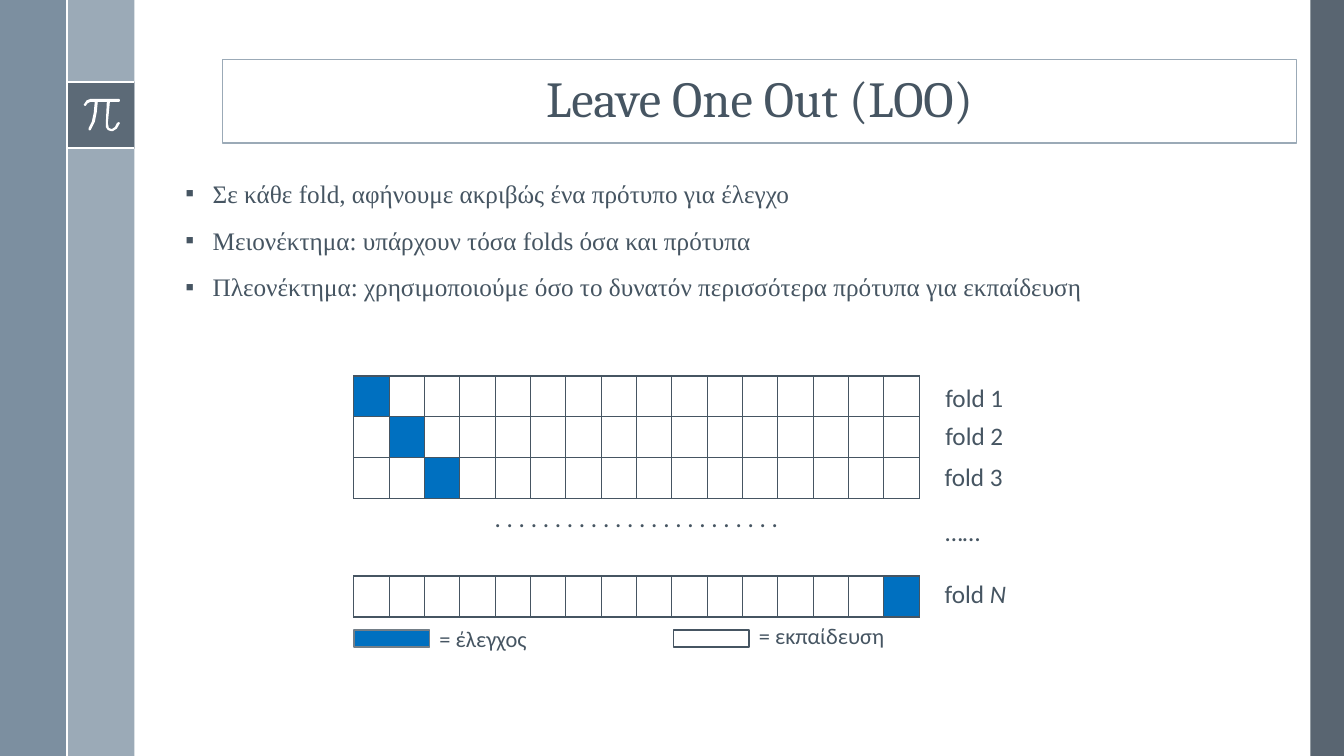
from dataclasses import dataclass

from lxml import etree
from pptx import Presentation
from pptx.dml.color import RGBColor
from pptx.enum.shapes import MSO_CONNECTOR, MSO_SHAPE
from pptx.enum.text import MSO_ANCHOR, MSO_AUTO_SIZE, PP_ALIGN
from pptx.oxml.ns import qn
from pptx.util import Inches, Pt

RECTANGLE = MSO_SHAPE.RECTANGLE
STRAIGHT = MSO_CONNECTOR.STRAIGHT
CENTER, LEFT = PP_ALIGN.CENTER, PP_ALIGN.LEFT
TOP, MIDDLE = MSO_ANCHOR.TOP, MSO_ANCHOR.MIDDLE
NO_AUTOFIT = MSO_AUTO_SIZE.NONE

WIDTH, HEIGHT = Inches(13.33), Inches(7.5)


@dataclass(frozen=True)
class Theme:
    ink: str = "465562"
    slate: str = "475562"
    steel: str = "6A8093"
    mist: str = "9BAAB7"
    swatch_edge: str = "737E87"
    test: str = "0070C0"
    white: str = "FFFFFF"
    title_font: str = "Cambria"
    body_font: str = "Times New Roman"
    label_font: str = "Calibri"
    title_size: int = 36
    text_size: int = 18
    legend_size: int = 16


THEME = Theme()

BULLETS = (
    "Σε κάθε fold, αφήνουμε ακριβώς ένα πρότυπο για έλεγχο",
    "Μειονέκτημα: υπάρχουν τόσα folds όσα και πρότυπα",
    "Πλεονέκτημα: χρησιμοποιούμε όσο το δυνατόν περισσότερα πρότυπα για εκπαίδευση",
)

# Fold table: column of the test sample in each row, None for the dotted row
SAMPLES = 16
TEST_COLUMNS = (0, 1, 2, None, SAMPLES - 1)
TABLE_LEFT, TABLE_TOP, TABLE_WIDTH = 26.33, 49.73, 42.1
FOLD_HEIGHT, DOTS_HEIGHT = 5.41, 10.25

# Label text, its italic ending, left and top as shares of the slide
FOLD_LABELS = (
    ("fold 1", "", 69.6, 49.87),
    ("fold 2", "", 69.6, 54.93),
    ("fold 3", "", 69.55, 60.4),
    ("……", "", 69.6, 67.6),
    ("fold ", "N", 69.55, 75.87),
)

# Outline of the pi sign, in hundredths of an inch from its corner
PI_OUTLINE = (
    (35, 0), (7, 0), (3, 1.5), (0, 6), (1, 7), (2, 7), (4, 4.3), (7, 3),
    (11, 3), (10, 14), (8, 23), (5, 29), (5, 31), (6, 31.3), (7, 31),
    (11, 23), (13, 13), (14, 3), (23, 3), (22, 24), (22, 28), (24, 31),
    (27, 32), (29, 32), (33, 29.5), (36, 24), (35, 23), (33, 24), (31, 28),
    (28, 30), (25, 29), (24, 24), (26, 3), (35, 3), (36, 2), (36, 1),
)


def across(percent):
    return round(WIDTH * percent / 100)


def down(percent):
    return round(HEIGHT * percent / 100)


def box(left, top, width, height):
    return across(left), down(top), across(width), down(height)


def color(value):
    return RGBColor.from_string(value)


def paint(shape, fill, line=None, opacity=100):
    shape.fill.solid()
    shape.fill.fore_color.rgb = color(fill)
    if opacity < 100:
        tint = shape.fill._xPr.find(qn("a:solidFill"))[0]
        etree.SubElement(tint, qn("a:alpha"), val=str(opacity * 1000))
    if line:
        shape.line.color.rgb = color(line)
        shape.line.width = Pt(1)
    else:
        shape.line.fill.background()


def add_box(slide, area, fill, line=None, opacity=100):
    shape = slide.shapes.add_shape(RECTANGLE, *box(*area))
    shape.shadow.inherit = False
    paint(shape, fill, line, opacity)


def add_rule(slide, start, end):
    rule = slide.shapes.add_connector(
        STRAIGHT, across(start[0]), down(start[1]), across(end[0]), down(end[1]))
    rule.line.color.rgb = color(THEME.white)
    rule.line.width = Pt(1.5)
    etree.SubElement(rule._element.spPr, qn("a:effectLst"))


def style(paragraph, font, size, align=LEFT):
    paragraph.alignment = align
    paragraph.font.name = font
    paragraph.font.size = Pt(size)
    paragraph.font.color.rgb = color(THEME.ink)


def set_frame(shape, area, anchor):
    shape.left, shape.top, shape.width, shape.height = box(*area)
    frame = shape.text_frame
    frame.word_wrap = True
    frame.auto_size = NO_AUTOFIT
    frame.vertical_anchor = anchor
    return frame


def add_label(slide, area, text, size, italic_end=""):
    shape = slide.shapes.add_textbox(*box(*area))
    paragraph = set_frame(shape, area, TOP).paragraphs[0]
    paragraph.add_run().text = text
    if italic_end:
        run = paragraph.add_run()
        run.text = italic_end
        run.font.italic = True
    style(paragraph, THEME.label_font, size)


def add_pi(slide):
    left, top = across(6.23), down(13.07)
    points = [(left + Inches(x / 100), top + Inches(y / 100)) for x, y in PI_OUTLINE]
    builder = slide.shapes.build_freeform(*points[0])
    builder.add_line_segments(points[1:], close=True)
    sign = builder.convert_to_shape()
    sign.shadow.inherit = False
    paint(sign, THEME.white)


def add_side_bars(slide):
    add_box(slide, (97.5, 0, 2.5, 100), THEME.slate, opacity=90)
    add_box(slide, (5, 0, 5, 100), THEME.mist)
    add_box(slide, (0, 0, 5, 100), THEME.steel, opacity=88)
    add_box(slide, (5, 10.8, 5, 8.87), THEME.slate, opacity=75)
    for level in (10.8, 19.6):
        add_rule(slide, (5, level), (10, level))
    add_pi(slide)
    add_rule(slide, (5, 0), (5, 100))


def fill_title(slide):
    title = slide.shapes.title
    paint(title, THEME.white, THEME.mist)
    paragraph = set_frame(title, (16.57, 7.87, 79.88, 11.07), MIDDLE).paragraphs[0]
    paragraph.text = "Leave One Out (LOO)"
    paragraph.line_spacing = 0.9
    style(paragraph, THEME.title_font, THEME.title_size, CENTER)


def fill_bullets(slide):
    frame = set_frame(slide.placeholders[1], (13.05, 23.33, 80.25, 66.67), TOP)
    frame.text = "\n".join(BULLETS)
    for paragraph in frame.paragraphs:
        paragraph.line_spacing = 0.9
        paragraph.space_before = Pt(14)
        properties = paragraph._p.get_or_add_pPr()
        properties.set("marL", str(Inches(0.27)))
        properties.set("indent", str(-Inches(0.27)))
        etree.SubElement(properties, qn("a:buFont"), typeface=THEME.body_font)
        etree.SubElement(properties, qn("a:buChar"), char="▪")
        style(paragraph, THEME.body_font, THEME.text_size)


def set_borders(cell, drawn):
    properties = cell._tc.get_or_add_tcPr()
    for position, side in enumerate("LRTB"):
        border = etree.Element(qn(f"a:ln{side}"), w=str(Pt(1)))
        if side in drawn:
            fill = etree.SubElement(border, qn("a:solidFill"))
            etree.SubElement(fill, qn("a:srgbClr"), val=THEME.ink)
        else:
            etree.SubElement(border, qn("a:noFill"))
        properties.insert(position, border)


def add_fold_table(slide):
    heights = [DOTS_HEIGHT if test is None else FOLD_HEIGHT for test in TEST_COLUMNS]
    area = box(TABLE_LEFT, TABLE_TOP, TABLE_WIDTH, sum(heights))
    table = slide.shapes.add_table(len(heights), SAMPLES, *area).table
    table.first_row = table.horz_banding = False
    for column in table.columns:
        column.width = across(TABLE_WIDTH / SAMPLES)
    for row, height, test in zip(table.rows, heights, TEST_COLUMNS):
        row.height = down(height)
        for index, cell in enumerate(row.cells):
            if index == test:
                cell.fill.solid()
                cell.fill.fore_color.rgb = color(THEME.test)
            else:
                cell.fill.background()
            set_borders(cell, "TB" if test is None else "LRTB")
    dots_row = TEST_COLUMNS.index(None)
    dots = table.cell(dots_row, 0)
    dots.merge(table.cell(dots_row, SAMPLES - 1))
    dots.text = " ".join("." * 24)
    style(dots.text_frame.paragraphs[0], THEME.label_font, THEME.text_size, CENTER)


def add_legend_entry(slide, left, fill, line, text, text_top):
    add_box(slide, (left, 83.33, 5.63, 2.27), fill, line)
    add_label(slide, (left + 5.63, text_top, 17.25, 4.93), text, THEME.legend_size)


def main():
    presentation = Presentation()
    presentation.slide_width, presentation.slide_height = WIDTH, HEIGHT
    slide = presentation.slides.add_slide(presentation.slide_layouts[1])

    # Frame and text
    add_side_bars(slide)
    fill_title(slide)
    fill_bullets(slide)

    # Fold diagram with labels and legend
    add_fold_table(slide)
    for text, italic_end, left, top in FOLD_LABELS:
        add_label(slide, (left, top, 10.28, 5.33), text, THEME.text_size, italic_end)
    add_legend_entry(slide, TABLE_LEFT, THEME.test, THEME.swatch_edge, "= έλεγχος", 82)
    add_legend_entry(slide, 50.1, THEME.white, THEME.ink, "= εκπαίδευση", 81.6)

    presentation.save("out.pptx")


if __name__ == "__main__":
    main()
